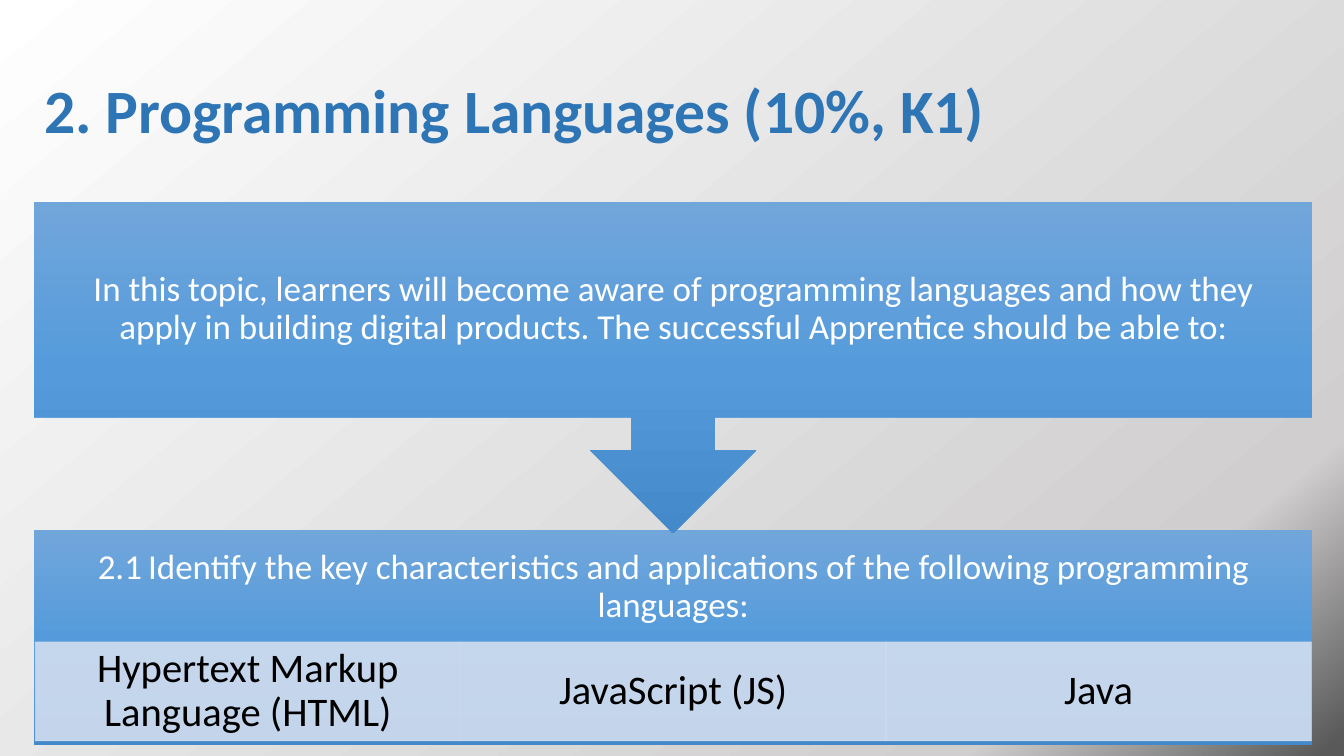
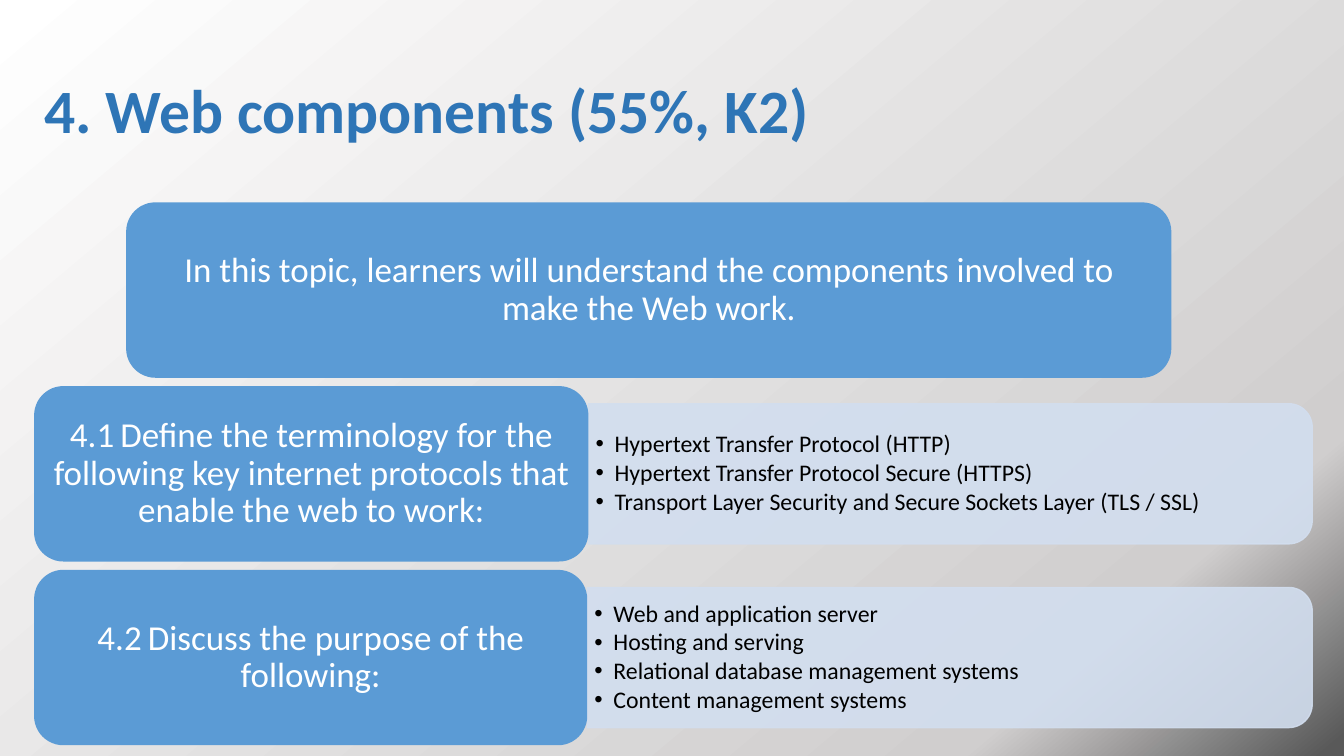
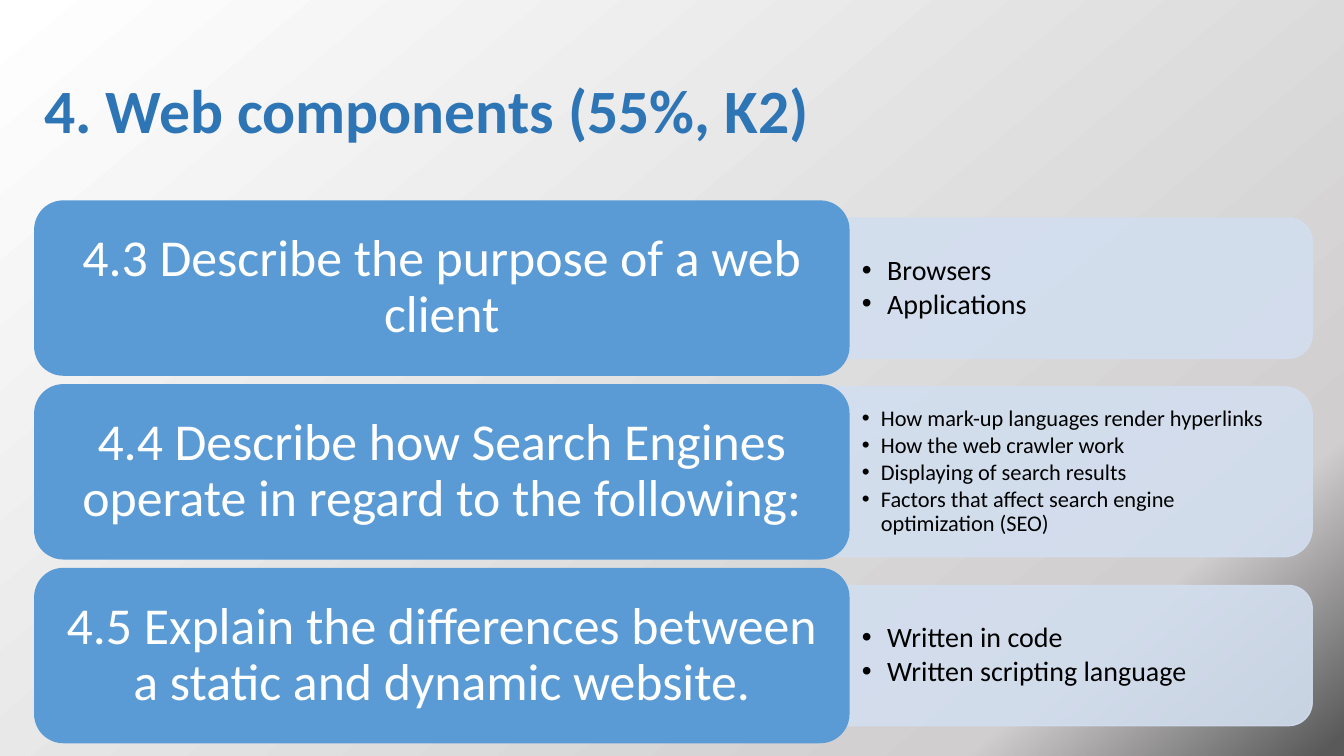
import math

import pptx
import pptx.dml.color
import pptx.enum.shapes
import pptx.enum.text
import pptx.oxml.ns
import pptx.oxml.xmlchemy
import pptx.util

Cm = pptx.util.Cm
Pt = pptx.util.Pt
SHAPE = pptx.enum.shapes.MSO_SHAPE
ALIGN = pptx.enum.text.PP_ALIGN
ANCHOR = pptx.enum.text.MSO_ANCHOR
qn = pptx.oxml.ns.qn

FONT = "Calibri"
TITLE_BLUE, CARD_BLUE, PALE_BLUE = "2E75B6", "5B9BD5", "D2DEEF"
WHITE, BLACK = "FFFFFF", "000000"
BACKGROUND = [(1, "595959"), (17, "D0CECE"), (100, WHITE)]
BLUE_BLEND = [(0, "71A6DB"), (50, "559BDB"), (100, "448ACA")]
LEFT, WIDTH = 0.86, 32.21
RIGHT = LEFT + WIDTH
CARD_HEIGHT, ROW_PITCH = 4.42, 4.63


def rgb(value):
    """Turn a hex string into a colour."""
    return pptx.dml.color.RGBColor.from_string(value)


def sub(parent, tag, **attributes):
    """Append a DrawingML element with the given attributes."""
    child = pptx.oxml.xmlchemy.OxmlElement(tag)
    for name, value in attributes.items():
        child.set(name, str(value))
    parent.append(child)
    return child


def blend(fill, element, stops, angle):
    """Give a fill gradient stops and an anticlockwise angle."""
    fill.gradient()
    fill.gradient_angle = angle
    stop_list = next(element.iter(qn("a:gsLst")))
    for stop in list(stop_list):
        stop_list.remove(stop)
    for position, color in stops:
        stop = sub(stop_list, "a:gs", pos=position * 1000)
        sub(stop, "a:srgbClr", val=color)


def write(sp, text, size=25, color=WHITE, bold=False, align=ALIGN.CENTER,
          inset=(0.25, 0.13, 0.25, 0.13), bullet=None):
    """Write one text or a list of texts, with an optional bullet indent in cm."""
    tf = sp.text_frame
    tf.word_wrap = True
    tf.auto_size = pptx.enum.text.MSO_AUTO_SIZE.NONE
    tf.vertical_anchor = ANCHOR.MIDDLE
    (tf.margin_left, tf.margin_top,
     tf.margin_right, tf.margin_bottom) = [Cm(side) for side in inset]
    lines = [text] if isinstance(text, str) else text
    for i, line in enumerate(lines):
        p = tf.add_paragraph() if i else tf.paragraphs[0]
        p.alignment = align
        p.line_spacing = 0.9
        p.space_before = Pt(0)
        if bullet:
            p.space_after = Pt(round(size * 0.13, 1))
            pPr = p._p.get_or_add_pPr()
            pPr.set("marL", str(Cm(bullet)))
            pPr.set("indent", str(-Cm(bullet)))
            sub(pPr, "a:buFont", typeface="Arial")
            sub(pPr, "a:buChar", char="•")
        r = p.add_run()
        r.text = line
        r.font.name = FONT
        r.font.size = Pt(size)
        r.font.bold = bold
        r.font.color.rgb = rgb(color)


def add_slide(prs, title):
    """Add a title-only slide with the shared title style."""
    slide = prs.slides.add_slide(prs.slide_layouts[5])
    sp = slide.shapes.title
    sp.left, sp.top, sp.width, sp.height = Cm(LEFT), Cm(1.02), Cm(WIDTH), Cm(3.68)
    write(sp, title, size=44, color=TITLE_BLUE, bold=True, align=ALIGN.LEFT)
    return slide


def add_box(slide, kind, left, top, width, height):
    """Add a preset shape without shadow or outline."""
    sp = slide.shapes.add_shape(kind, Cm(left), Cm(top), Cm(width), Cm(height))
    sp.shadow.inherit = False
    sp.line.fill.background()
    return sp


def blend_box(slide, kind, top, height, text, inset):
    """Add a full-width shape in blended blue."""
    sp = add_box(slide, kind, LEFT, top, WIDTH, height)
    blend(sp.fill, sp.element.spPr, BLUE_BLEND, 270)
    write(sp, text, inset=inset)


def tint(sp, line_width):
    """Give a shape the pale fill and outline, slightly transparent."""
    sp.shadow.inherit = False
    sp.line.width = Pt(line_width)
    for fill in (sp.fill, sp.line.fill):
        fill.solid()
        fill.fore_color.rgb = rgb(PALE_BLUE)
    for color in sp.element.spPr.iter(qn("a:srgbClr")):
        sub(color, "a:alpha", val=90000)


def add_card(slide, left, top, width, text, size=25, inset=(0.27, 0.14)):
    """Add a rounded blue card."""
    sp = add_box(slide, SHAPE.ROUNDED_RECTANGLE, left, top, width, CARD_HEIGHT)
    sp.fill.solid()
    sp.fill.fore_color.rgb = rgb(CARD_BLUE)
    write(sp, text, size=size, inset=inset * 2)


def add_panel(slide, left, top, height, lines, **style):
    """Add a pale bullet panel rounded on its right side."""
    radius = height / 6
    bottom = top + height
    points = []
    for center, start in ((top + radius, -90), (bottom - radius, 0)):
        for degrees in range(start, start + 91, 5):
            angle = math.radians(degrees)
            points.append((RIGHT - radius + radius * math.cos(angle),
                           center + radius * math.sin(angle)))
    points.append((left, bottom))
    builder = slide.shapes.build_freeform(Cm(left), Cm(top))
    builder.add_line_segments([(Cm(x), Cm(y)) for x, y in points], close=True)
    sp = builder.convert_to_shape()
    tint(sp, 1)
    write(sp, lines, color=BLACK, align=ALIGN.LEFT, **style)


def add_row(slide, top, card_width, card_text, panel_left, panel_height, lines,
            card_style, panel_style):
    """Add a card with its bullet panel centred beside it."""
    panel_top = top + (CARD_HEIGHT - panel_height) / 2
    add_panel(slide, panel_left, panel_top, panel_height, lines, **panel_style)
    add_card(slide, LEFT, top, card_width, card_text, **card_style)


def languages_slide(prs):
    """Build the slide on programming languages."""
    slide = add_slide(prs, "2. Programming Languages (10%, K1)")
    blend_box(slide, SHAPE.RECTANGLE, 13.35, 5.43,
              "2.1\tIdentify the key characteristics and applications of the "
              "following programming languages:", (0.48, 0.48, 0.48, 3))
    cell_width = 10.72
    for i, name in enumerate(("Hypertext Markup Language (HTML)",
                              "JavaScript (JS)", "Java")):
        sp = add_box(slide, SHAPE.RECTANGLE, 0.89 + i * cell_width, 16.18,
                     cell_width, 2.49)
        tint(sp, 0.5)
        write(sp, name, size=29, color=BLACK, inset=(0.58, 0.1) * 2)
    blend_box(slide, SHAPE.DOWN_ARROW_CALLOUT, 5.08, 8.36,
              "In this topic, learners will become aware of programming languages "
              "and how they apply in building digital products. The successful "
              "Apprentice should be able to:", (0.48,) * 4)


def protocols_slide(prs):
    """Build the slide on protocols and servers."""
    slide = add_slide(prs, "4. Web components (55%, K2)")
    top = 5.1
    add_card(slide, 3.18, top, 26.34, "In this topic, learners will understand "
             "the components involved to make the Web work.")
    rows = [
        (13.97, "4.1\tDefine the terminology for the following key internet "
         "protocols that enable the web to work:",
         ["Hypertext Transfer Protocol (HTTP)",
          "Hypertext Transfer Protocol Secure (HTTPS)",
          "Transport Layer Security and Secure Sockets Layer (TLS / SSL)"]),
        (13.94, "4.2\tDiscuss the purpose of the following:",
         ["Web and application server", "Hosting and serving",
          "Relational database management systems",
          "Content management systems"]),
    ]
    panel_style = dict(size=17, bullet=0.48, inset=(0.18, 0.25, 0.36, 0.25))
    for i, (width, text, lines) in enumerate(rows, 1):
        add_row(slide, top + i * ROW_PITCH, width, text, LEFT + width, 3.53,
                lines, {}, panel_style)


def clients_slide(prs):
    """Build the slide on clients, search and websites."""
    slide = add_slide(prs, "4. Web components (55%, K2)")
    large = dict(size=20, bullet=0.64, inset=(0.69, 0.51, 0.86, 0.51))
    small = dict(size=16, bullet=0.48, inset=(0.69, 0.56, 0.89, 0.56))
    rows = [
        ("4.3 Describe the purpose of a web client", 3.53, large,
         ["Browsers", "Applications"]),
        ("4.4 Describe how Search Engines operate in regard to the following:",
         4.28, small,
         ["How mark-up languages render hyperlinks", "How the web crawler work",
          "Displaying of search results",
          "Factors that affect search engine optimization (SEO)"]),
        ("4.5 Explain the differences between a static and dynamic website.",
         3.53, large, ["Written in code", "Written scripting language"]),
    ]
    card_style = dict(size=37, inset=(0.39, 0.19))
    for i, (text, height, panel_style, lines) in enumerate(rows):
        add_row(slide, 5.05 + i * ROW_PITCH, 20.55, text, 21.03, height,
                lines, card_style, panel_style)


def main():
    """Build and save the presentation."""
    prs = pptx.Presentation()
    prs.slide_width, prs.slide_height = Cm(33.87), Cm(19.05)
    master = prs.slide_master
    blend(master.background.fill, master.element, BACKGROUND, 130)
    languages_slide(prs)
    protocols_slide(prs)
    clients_slide(prs)
    prs.save("out.pptx")


if __name__ == "__main__":
    main()
